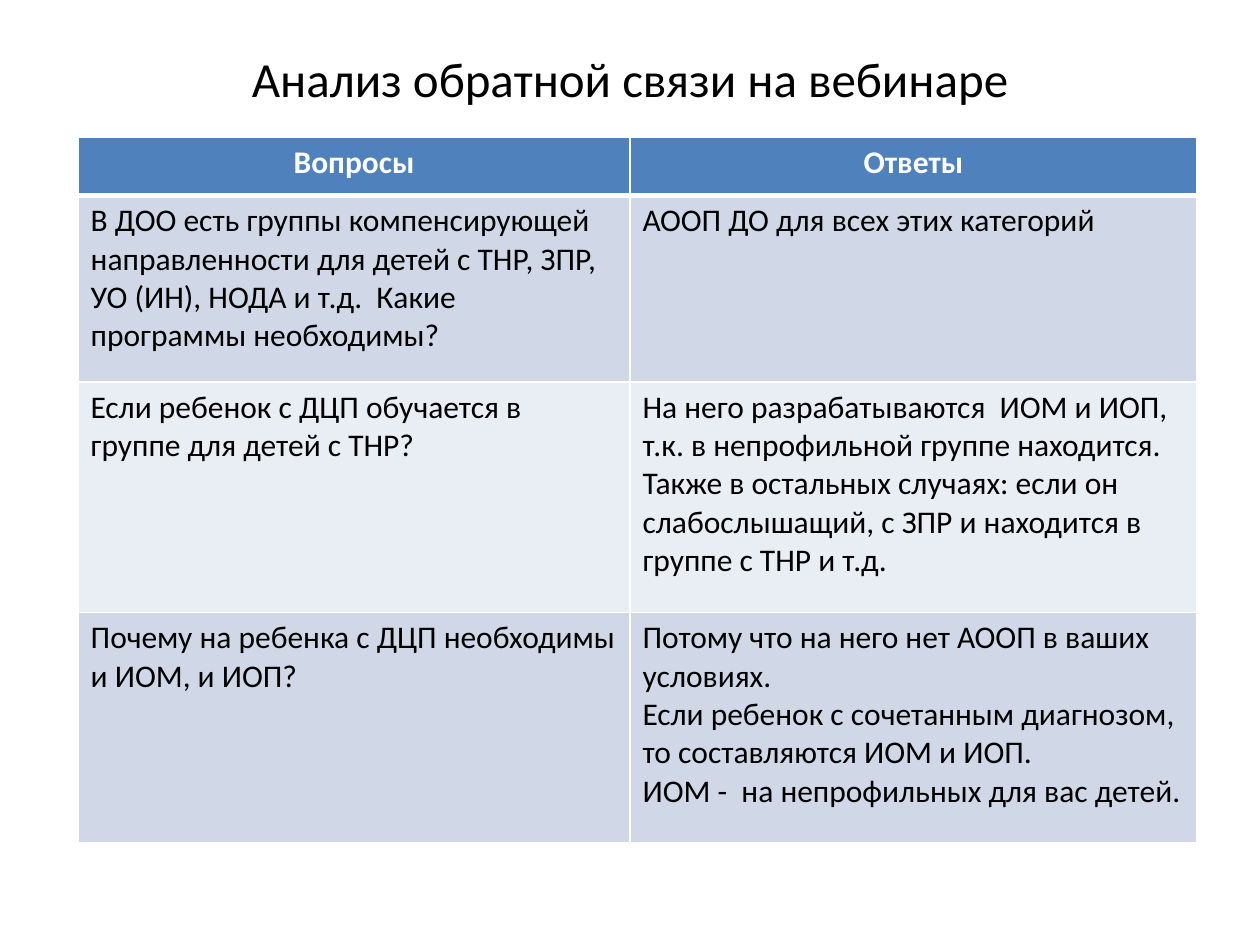
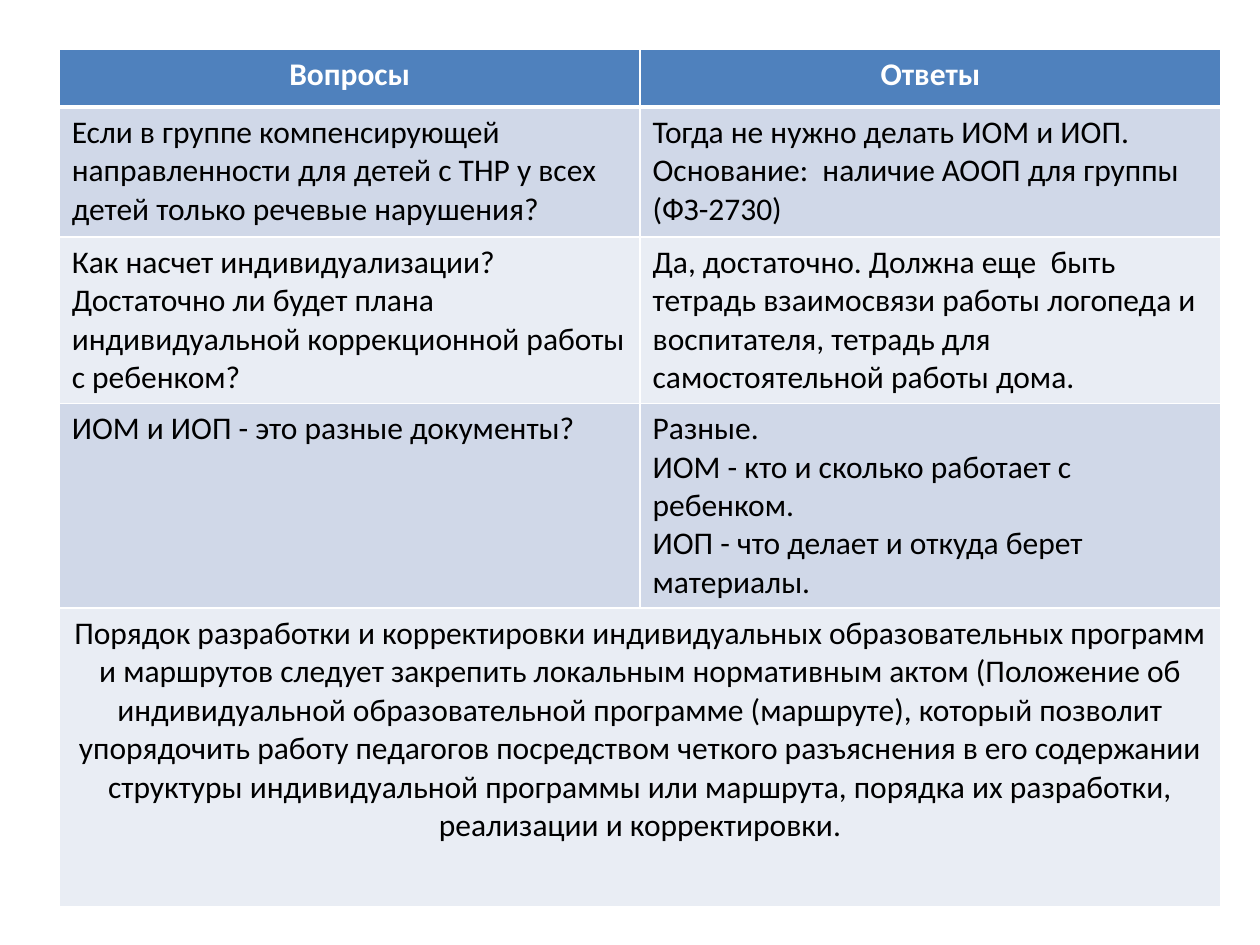
"""Build two slides of webinar questions and answers."""
import pptx
import pptx.util
import pptx.dml.color
import pptx.enum.text
import pptx.oxml
import pptx.oxml.ns

COLORS = {"header": "4F81BD", "odd": "D0D8E8", "even": "E9EDF4",
          "white": "FFFFFF", "black": "000000"}
FONT = "Calibri"
TITLE_SIZE, TABLE_SIZE = 28, 18
THIN, THICK = 1, 3
CENTER = pptx.enum.text.PP_ALIGN.CENTER
LEFT = pptx.enum.text.PP_ALIGN.LEFT
HEADER = ("Вопросы", "Ответы")
HEADER_HEIGHT = 0.46
TITLE_ONLY, BLANK = 5, 6

SLIDES = [
    {
        "title": "Анализ обратной связи на вебинаре",
        "origin": (0.62, 1.09),
        "columns": (4.38, 4.5),
        "heights": (1.48, 1.83, 1.83),
        "rows": [
            ("В ДОО есть группы компенсирующей направленности для детей с ТНР, ЗПР, "
             "УО (ИН), НОДА и т.д.  Какие программы необходимы?",
             "АООП ДО для всех этих категорий"),
            ("Если ребенок с ДЦП обучается в группе для детей с ТНР?",
             "На него разрабатываются  ИОМ и ИОП, т.к. в непрофильной группе находится.  "
             "Также в остальных случаях: если он слабослышащий, с ЗПР и находится "
             "в группе с ТНР и т.д."),
            ("Почему на ребенка с ДЦП необходимы и ИОМ, и ИОП?",
             "Потому что на него нет АООП в ваших условиях.\n"
             "Если ребенок с сочетанным диагнозом, то составляются ИОМ и ИОП.\n"
             "ИОМ -  на непрофильных для вас детей."),
        ],
    },
    {
        "title": None,
        "origin": (0.47, 0.39),
        "columns": (4.61, 4.61),
        "heights": (1.03, 1.28, 1.59, 2.37),
        "rows": [
            ("Если в группе компенсирующей направленности для детей с ТНР у всех детей "
             "только речевые нарушения?",
             "Тогда не нужно делать ИОМ и ИОП.\n"
             "Основание:  наличие АООП для группы (ФЗ-2730)"),
            ("Как насчет индивидуализации? Достаточно ли будет плана индивидуальной "
             "коррекционной работы с ребенком?",
             "Да, достаточно. Должна еще  быть тетрадь взаимосвязи работы логопеда и "
             "воспитателя, тетрадь для самостоятельной работы дома."),
            ("ИОМ и ИОП - это разные документы?",
             "Разные.\n"
             "ИОМ - кто и сколько работает с ребенком.\n"
             "ИОП - что делает и откуда берет материалы."),
            ("Порядок разработки и корректировки индивидуальных образовательных программ "
             "и маршрутов следует закрепить локальным нормативным актом (Положение об "
             "индивидуальной образовательной программе (маршруте), который позволит "
             "упорядочить работу педагогов посредством четкого разъяснения в его содержании "
             "структуры индивидуальной программы или маршрута, порядка их разработки, "
             "реализации и корректировки.",),
        ],
    },
]


def format_text(text_frame, size, color, alignment, bold=False):
    """Apply one style to every run of a text frame."""
    for paragraph in text_frame.paragraphs:
        paragraph.alignment = alignment
        for run in paragraph.runs:
            run.font.name = FONT
            run.font.size = pptx.util.Pt(size)
            run.font.bold = bold
            run.font.color.rgb = pptx.dml.color.RGBColor.from_string(COLORS[color])


def set_borders(cell, top, bottom):
    """Draw white cell borders with the given top and bottom widths."""
    properties = cell._tc.get_or_add_tcPr()
    widths = {"lnL": THIN, "lnR": THIN, "lnT": top, "lnB": bottom}
    for index, (tag, width) in enumerate(widths.items()):
        properties.insert(index, pptx.oxml.parse_xml(
            f'<a:{tag} {pptx.oxml.ns.nsdecls("a")} w="{pptx.util.Pt(width)}">'
            f'<a:solidFill><a:srgbClr val="{COLORS["white"]}"/></a:solidFill></a:{tag}>'))


def add_title(slide, text):
    """Place the slide title."""
    title = slide.shapes.title
    title.left, title.top, title.width, title.height = map(
        pptx.util.Inches, (0.5, 0.3, 9, 0.64))
    title.text_frame.text = text
    title.text_frame.vertical_anchor = pptx.enum.text.MSO_ANCHOR.MIDDLE
    format_text(title.text_frame, TITLE_SIZE, "black", CENTER)


def add_question_table(slide, content):
    """Add the table of questions and answers with banded rows."""
    rows = [HEADER] + content["rows"]
    columns = content["columns"]
    heights = (HEADER_HEIGHT,) + content["heights"]
    frame = (*content["origin"], sum(columns), sum(heights))
    table = slide.shapes.add_table(
        len(rows), len(columns), *map(pptx.util.Inches, frame)).table
    for column, width in zip(table.columns, columns):
        column.width = pptx.util.Inches(width)
    for index, (texts, height) in enumerate(zip(rows, heights)):
        table.rows[index].height = pptx.util.Inches(height)
        is_header, is_merged = index == 0, len(texts) == 1
        fill = "header" if is_header else "odd" if index % 2 else "even"
        for position in range(len(columns)):
            cell = table.cell(index, position)
            cell.fill.solid()
            cell.fill.fore_color.rgb = pptx.dml.color.RGBColor.from_string(COLORS[fill])
            set_borders(cell, THICK if index == 1 else THIN, THICK if is_header else THIN)
        if is_merged:
            table.cell(index, 0).merge(table.cell(index, len(columns) - 1))
        for position, text in enumerate(texts):
            text_frame = table.cell(index, position).text_frame
            text_frame.text = text
            format_text(text_frame, TABLE_SIZE, "white" if is_header else "black",
                        CENTER if is_header or is_merged else LEFT, is_header)


def main():
    """Create and save the presentation."""
    presentation = pptx.Presentation()
    presentation.slide_width = pptx.util.Inches(10)
    presentation.slide_height = pptx.util.Inches(7.5)
    for content in SLIDES:
        layout = TITLE_ONLY if content["title"] else BLANK
        slide = presentation.slides.add_slide(presentation.slide_layouts[layout])
        if content["title"]:
            add_title(slide, content["title"])
        add_question_table(slide, content)
    presentation.save("out.pptx")


if __name__ == "__main__":
    main()
